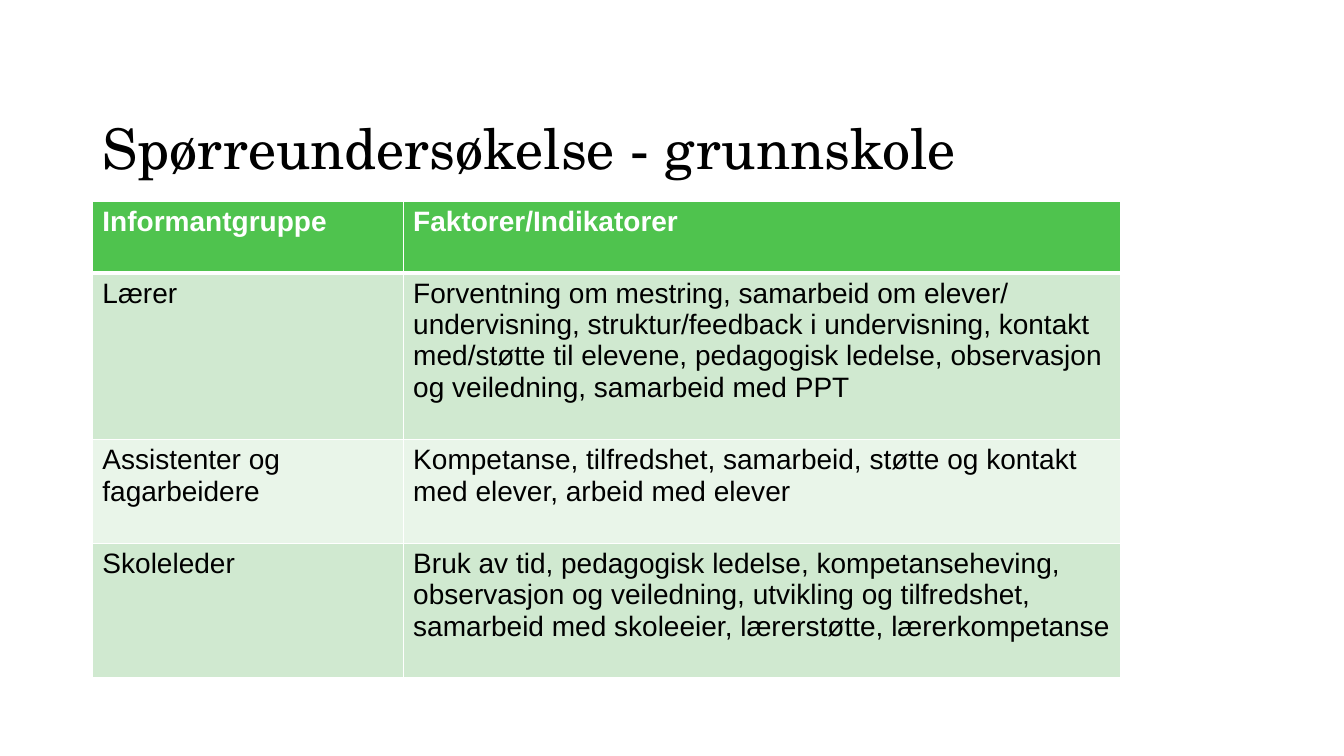
from dataclasses import dataclass

from lxml import etree
from pptx import Presentation
from pptx.dml.color import RGBColor
from pptx.enum import text
from pptx.oxml import ns
from pptx.util import Pt


@dataclass(frozen=True)
class Theme:
    black: str = "000000"
    white: str = "FFFFFF"
    header: str = "4FC34E"
    bands: tuple = ("D0E9D0", "E9F5E9")
    title_font: str = "TeX Gyre Schola"
    body_font: str = "Arial"
    title_size: int = 40
    body_size: int = 20


THEME = Theme()
COLUMN_WIDTHS = (222, 512.4)
ROW_HEIGHTS = (51, 119, 74, 96)
ROWS = (
    ("Informantgruppe", "Faktorer/Indikatorer"),
    ("Lærer",
     "Forventning om mestring, samarbeid om elever/ undervisning, "
     "struktur/feedback i undervisning, kontakt med/støtte til elevene, "
     "pedagogisk ledelse, observasjon og veiledning, samarbeid med PPT"),
    ("Assistenter og fagarbeidere",
     "Kompetanse, tilfredshet, samarbeid, støtte og kontakt med elever, "
     "arbeid med elever"),
    ("Skoleleder",
     "Bruk av tid, pedagogisk ledelse, kompetanseheving, observasjon og "
     "veiledning, utvikling og tilfredshet, samarbeid med skoleeier, "
     "lærerstøtte, lærerkompetanse"),
)


def write(tf, words, color, **formats):
    p = tf.paragraphs[0]
    r = p.add_run()
    r.text = words
    for name, value in formats.items():
        setattr(r.font, name, value)
    r.font.color.rgb = RGBColor.from_string(color)
    return p


def set_borders(cell, widths):
    """Draw white cell borders; widths maps L, R, T and B to points."""
    tc_pr = cell._tc.get_or_add_tcPr()
    for index, (side, width) in enumerate(widths.items()):
        ln = etree.Element(ns.qn(f"a:ln{side}"), w=str(Pt(width)))
        fill = etree.SubElement(ln, ns.qn("a:solidFill"))
        etree.SubElement(fill, ns.qn("a:srgbClr"), val=THEME.white)
        tc_pr.insert(index, ln)


def add_title(s, left, top, width, height):
    sp = s.shapes.title
    box = dict(left=left, top=top, width=width, height=height)
    for name, value in box.items():
        setattr(sp, name, Pt(value))
    tf = sp.text_frame
    frame = dict(word_wrap=True, auto_size=text.MSO_AUTO_SIZE.NONE,
                 vertical_anchor=text.MSO_ANCHOR.BOTTOM)
    for name, value in frame.items():
        setattr(tf, name, value)
    p = write(tf, "Spørreundersøkelse - grunnskole", THEME.black,
              name=THEME.title_font, size=Pt(THEME.title_size), bold=False)
    p.alignment = text.PP_ALIGN.LEFT
    p.line_spacing = 0.9


def add_survey_table(s, left, top, width):
    table = s.shapes.add_table(len(ROWS), len(COLUMN_WIDTHS), Pt(left), Pt(top),
                               Pt(width), Pt(sum(ROW_HEIGHTS))).table
    for column, share in zip(table.columns, COLUMN_WIDTHS):
        column.width = Pt(width * share / sum(COLUMN_WIDTHS))
    for i, (row, height, words) in enumerate(zip(table.rows, ROW_HEIGHTS, ROWS)):
        row.height = Pt(height)
        is_header = i == 0
        fill = THEME.header if is_header else THEME.bands[(i - 1) % 2]
        color = THEME.white if is_header else THEME.black
        # A heavier rule separates the header from the body
        borders = dict(L=1, R=1, T=3 if i == 1 else 1, B=3 if is_header else 1)
        for cell, content in zip(row.cells, words):
            cell.fill.solid()
            cell.fill.fore_color.rgb = RGBColor.from_string(fill)
            set_borders(cell, borders)
            write(cell.text_frame, content, color, name=THEME.body_font,
                  size=Pt(THEME.body_size), bold=is_header)


def main():
    prs = Presentation()
    prs.slide_width, prs.slide_height = Pt(960), Pt(540)
    s = prs.slides.add_slide(prs.slide_layouts[5])
    left, width = 66, sum(COLUMN_WIDTHS)
    add_title(s, left, 28.8, width, 104.4)
    add_survey_table(s, left, 144, width)
    prs.save("out.pptx")


if __name__ == "__main__":
    main()
